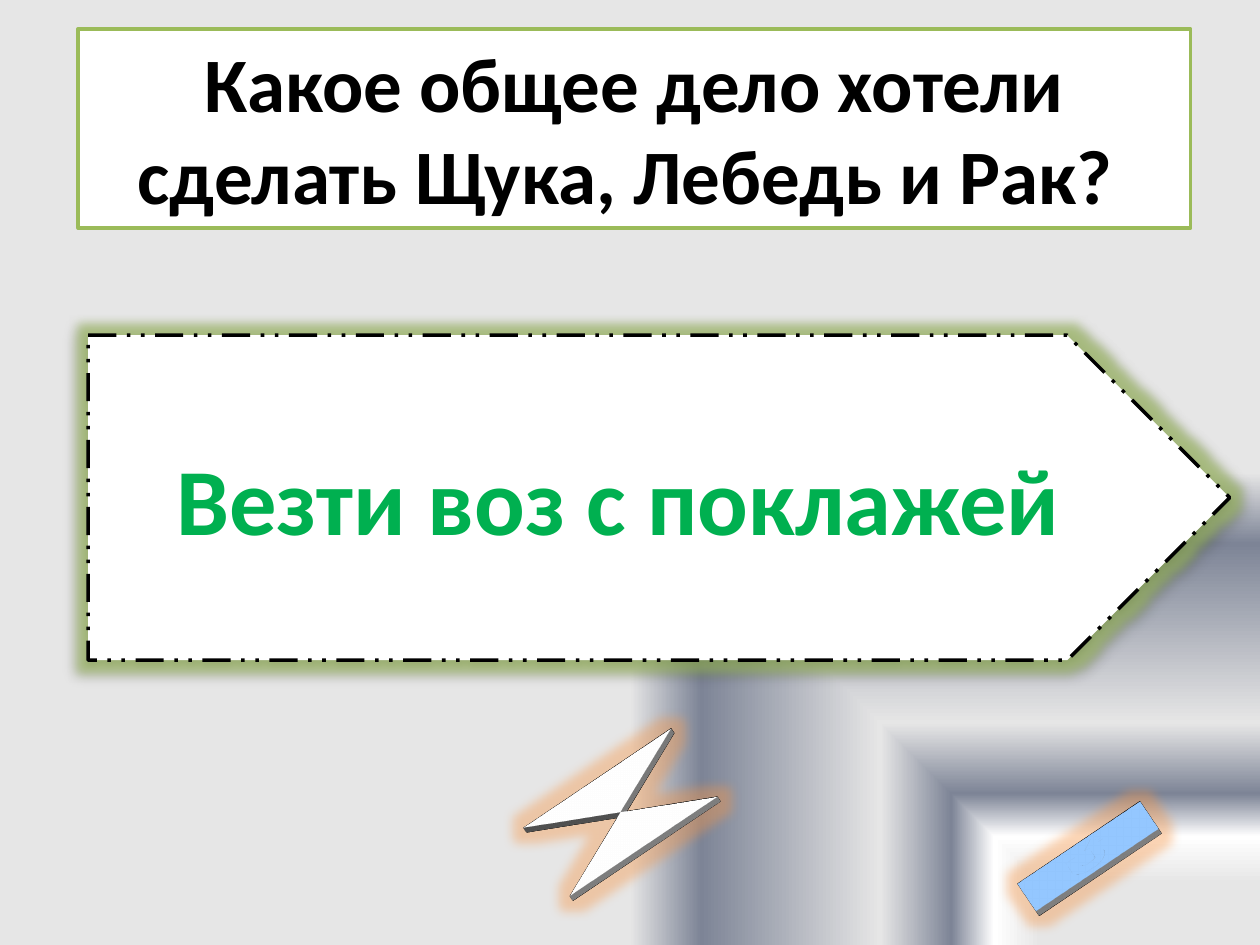
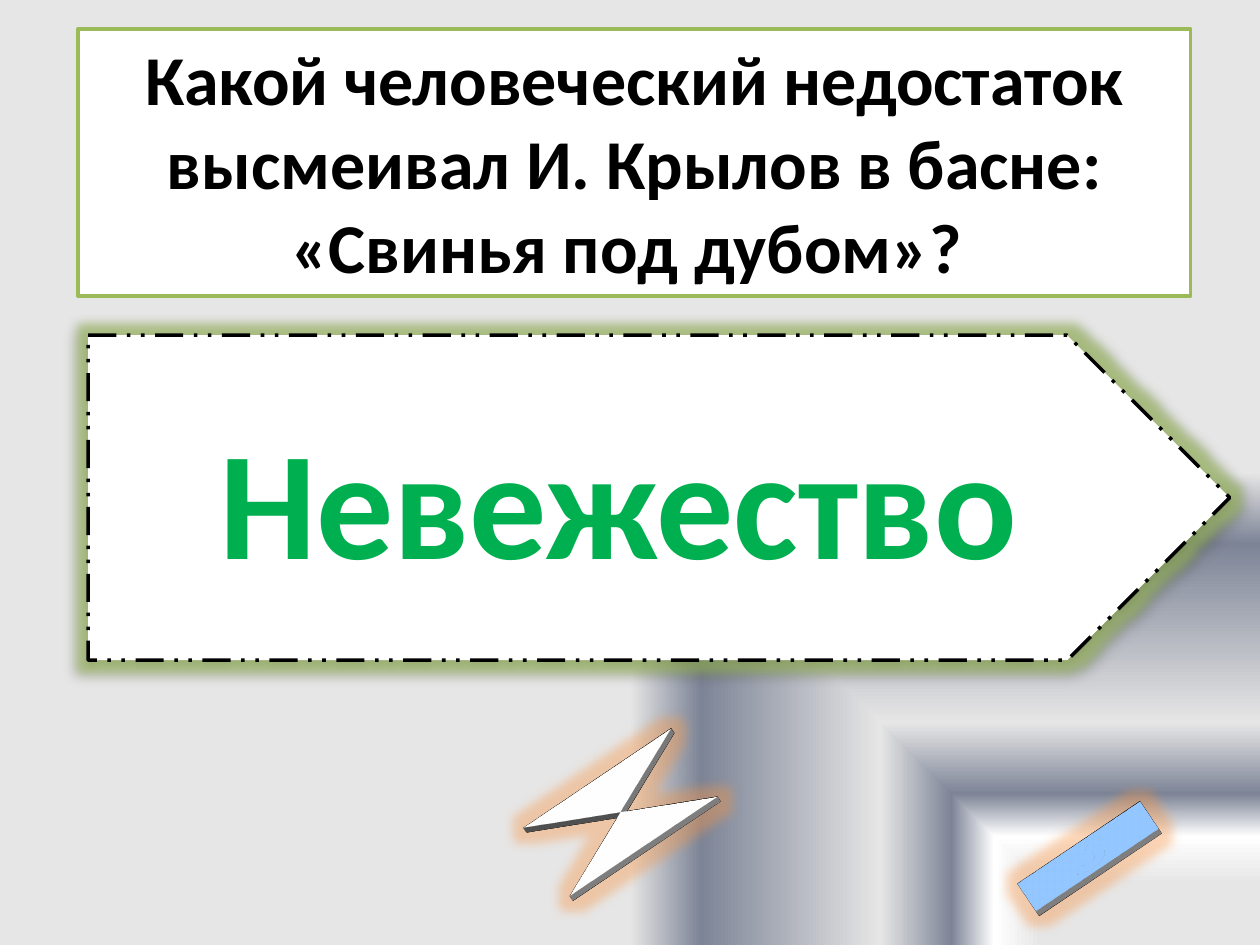
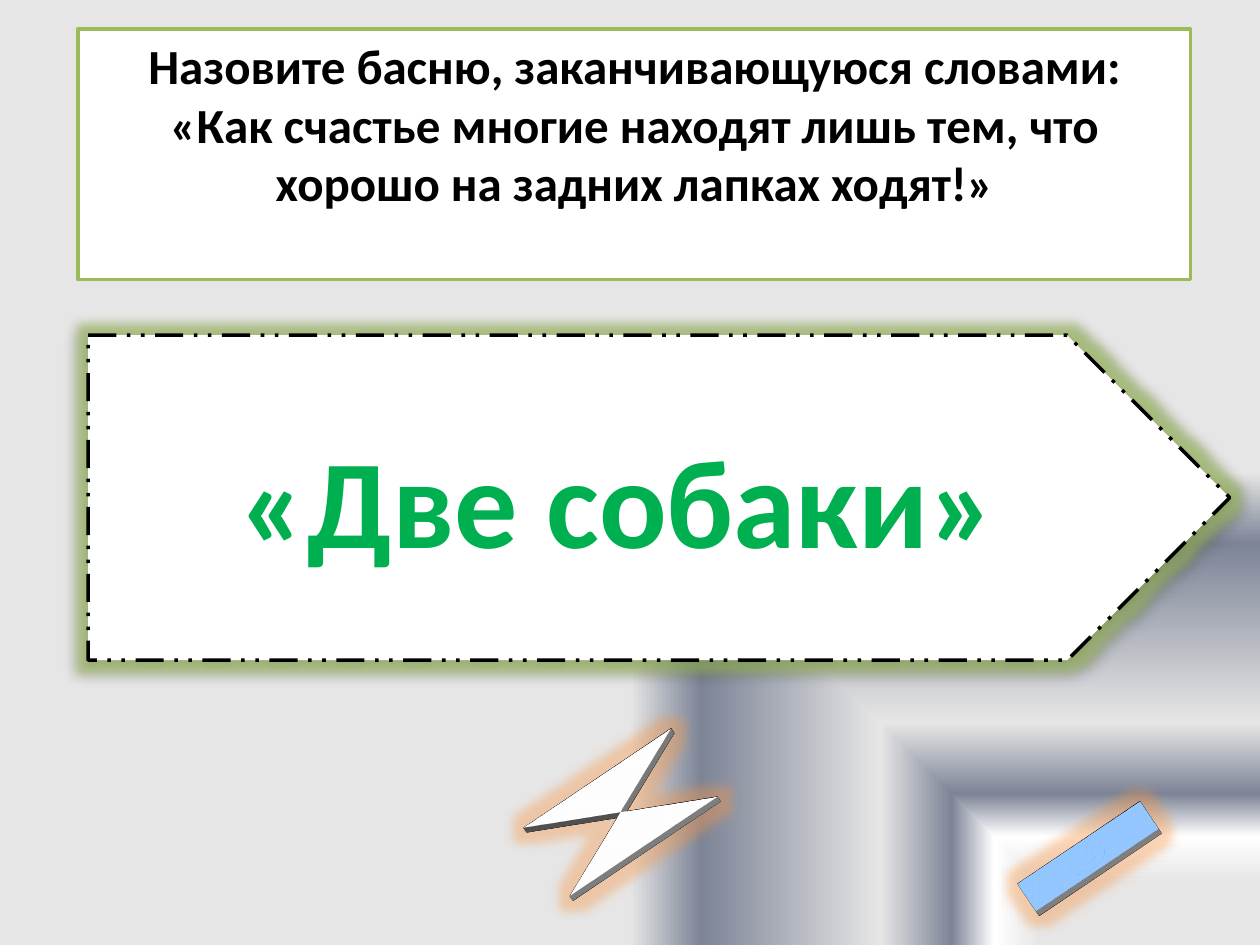
from dataclasses import dataclass

import pptx
import pptx.dml.color
import pptx.enum.dml
import pptx.enum.shapes
import pptx.enum.text
import pptx.oxml
import pptx.oxml.ns
import pptx.util
from pptx.util import Inches

# Shared look
FONT = "Calibri"
WHITE, BLACK, BLUE = "FFFFFF", "000000", "4F81BD"
GREEN, ANSWER_GREEN, ORANGE = "9BBB59", "00B050", "F79646"
GRAY, SLATE = "E6E6E6", "7D8496"
BACKDROP = [(13, GRAY, 100), (23, WHITE, 53), (32, SLATE, 100),
            (47, GRAY, 100), (85, SLATE, 100), (100, GRAY, 100)]
NS = 'xmlns:a="http://schemas.openxmlformats.org/drawingml/2006/main"'
SHAPE = pptx.enum.shapes.MSO_SHAPE
ANCHOR = pptx.enum.text.MSO_ANCHOR


@dataclass
class Quiz:
    question: str
    question_size: int
    box_height: float
    answer: str
    answer_size: int


@dataclass
class Effects:
    glow: str
    glow_alpha: int
    shadow_alpha: int
    blur: float
    distance: float
    angle: int


@dataclass
class Ornament:
    kind: SHAPE
    at: tuple[float, float, float, float]
    fill: str


QUIZZES = [
    Quiz("Какое общее дело хотели сделать Щука, Лебедь и Рак? ", 44, 1.58,
         "Везти воз с поклажей", 54),
    Quiz("Какой человеческий недостаток высмеивал И. Крылов в басне: "
         "«Свинья под дубом»? ", 40, 2.12, "Невежество", 88),
    Quiz("Назовите басню, заканчивающуюся словами:\n"
         "«Кaк счaстьe мнoгиe нaходят лишь тeм, чтo хорoшо нa зaдних "
         "лaпках ходят!»", 28, 1.99, "«Две собаки»", 72),
]
ARROW_EFFECTS = Effects(GREEN, 60, 32, 3.5, 2.2, 90)
ORNAMENT_EFFECTS = Effects(ORANGE, 40, 43, 25, 0, 45)
HOURGLASS = Ornament(SHAPE.FLOWCHART_COLLATE, (4.22, 5.86, 1.41, 1.17), WHITE)
RETURN_BUTTON = Ornament(SHAPE.ACTION_BUTTON_RETURN, (8.05, 6.56, 1.17, 0.47), BLUE)


def rgb(color: str) -> pptx.dml.color.RGBColor:
    return pptx.dml.color.RGBColor.from_string(color)


def color_xml(color: str, alpha: int) -> str:
    return f'<a:srgbClr val="{color}"><a:alpha val="{alpha * 1000}"/></a:srgbClr>'


def set_background(master) -> None:
    stops = "".join(f'<a:gs pos="{pos * 1000}">{color_xml(color, alpha)}</a:gs>'
                    for pos, color, alpha in BACKDROP)
    master.background.fill.gradient()
    old = next(master.element.iter(pptx.oxml.ns.qn("a:gradFill")))
    old.getparent().replace(old, pptx.oxml.parse_xml(
        f'<a:gradFill {NS} rotWithShape="1"><a:gsLst>{stops}</a:gsLst>'
        '<a:path path="rect"><a:fillToRect l="100000" t="100000"/></a:path>'
        '</a:gradFill>'))


def paint(sp, fill: str, line: str, width: float) -> None:
    sp.fill.solid()
    sp.fill.fore_color.rgb = rgb(fill)
    sp.line.color.rgb = rgb(line)
    sp.line.width = pptx.util.Pt(width)


def add_effects(sp, fx: Effects) -> None:
    sp.shadow.inherit = False
    pt = pptx.util.Pt
    old = sp._element.spPr.find(pptx.oxml.ns.qn("a:effectLst"))
    sp._element.spPr.replace(old, pptx.oxml.parse_xml(
        f'<a:effectLst {NS}><a:glow rad="{pt(12)}">'
        f'{color_xml(fx.glow, fx.glow_alpha)}</a:glow>'
        f'<a:outerShdw blurRad="{pt(fx.blur)}" dist="{pt(fx.distance)}" '
        f'dir="{fx.angle * 60000}" rotWithShape="0">'
        f'{color_xml(BLACK, fx.shadow_alpha)}</a:outerShdw></a:effectLst>'))


def tilt(sp) -> None:
    """Lay the shape back as a thin turned slab."""
    for xml in (
            f'<a:scene3d {NS}><a:camera prst="orthographicFront">'
            f'<a:rot lat="{304 * 60000}" lon="0" rev="{34 * 60000}"/></a:camera>'
            '<a:lightRig rig="threePt" dir="t"/></a:scene3d>',
            f'<a:sp3d {NS} extrusionH="{pptx.util.Pt(4)}"/>'):
        sp._element.spPr.append(pptx.oxml.parse_xml(xml))


def write(sp, text: str, size: int, color: str, anchor: ANCHOR) -> None:
    tf = sp.text_frame
    tf.word_wrap = True
    tf.auto_size = pptx.enum.text.MSO_AUTO_SIZE.NONE
    tf.vertical_anchor = anchor
    p = tf.paragraphs[0]
    p.alignment = pptx.enum.text.PP_ALIGN.CENTER
    for i, line in enumerate(text.split("\n")):
        if i:
            p.add_line_break()
        r = p.add_run()
        r.text = line
        r.font.name = FONT
        r.font.size = pptx.util.Pt(size)
        r.font.bold = True
        r.font.color.rgb = rgb(color)


def add_question(s, quiz: Quiz) -> None:
    sp = s.shapes.title
    sp.left, sp.top = Inches(0.62), Inches(0.23)
    sp.width, sp.height = Inches(8.83), Inches(quiz.box_height)
    paint(sp, WHITE, GREEN, 2)
    write(sp, quiz.question, quiz.question_size, BLACK, ANCHOR.TOP)


def add_answer(s, quiz: Quiz) -> None:
    sp = s.shapes.add_shape(SHAPE.PENTAGON, Inches(0.7), Inches(2.66),
                            Inches(9.06), Inches(2.58))
    paint(sp, WHITE, BLACK, 2)
    sp.line.dash_style = pptx.enum.dml.MSO_LINE.DASH_DOT_DOT
    add_effects(sp, ARROW_EFFECTS)
    write(sp, quiz.answer, quiz.answer_size, ANSWER_GREEN, ANCHOR.MIDDLE)


def add_ornament(s, item: Ornament) -> None:
    sp = s.shapes.add_shape(item.kind, *(Inches(v) for v in item.at))
    paint(sp, item.fill, WHITE, 2.75)
    add_effects(sp, ORNAMENT_EFFECTS)
    tilt(sp)


def main() -> None:
    prs = pptx.Presentation()
    prs.slide_width, prs.slide_height = Inches(10), Inches(7.5)
    set_background(prs.slide_master)
    title_only = prs.slide_layouts[5]
    for quiz in QUIZZES:
        s = prs.slides.add_slide(title_only)
        add_question(s, quiz)
        add_ornament(s, HOURGLASS)
        add_answer(s, quiz)
        add_ornament(s, RETURN_BUTTON)
    prs.save("out.pptx")


if __name__ == "__main__":
    main()
